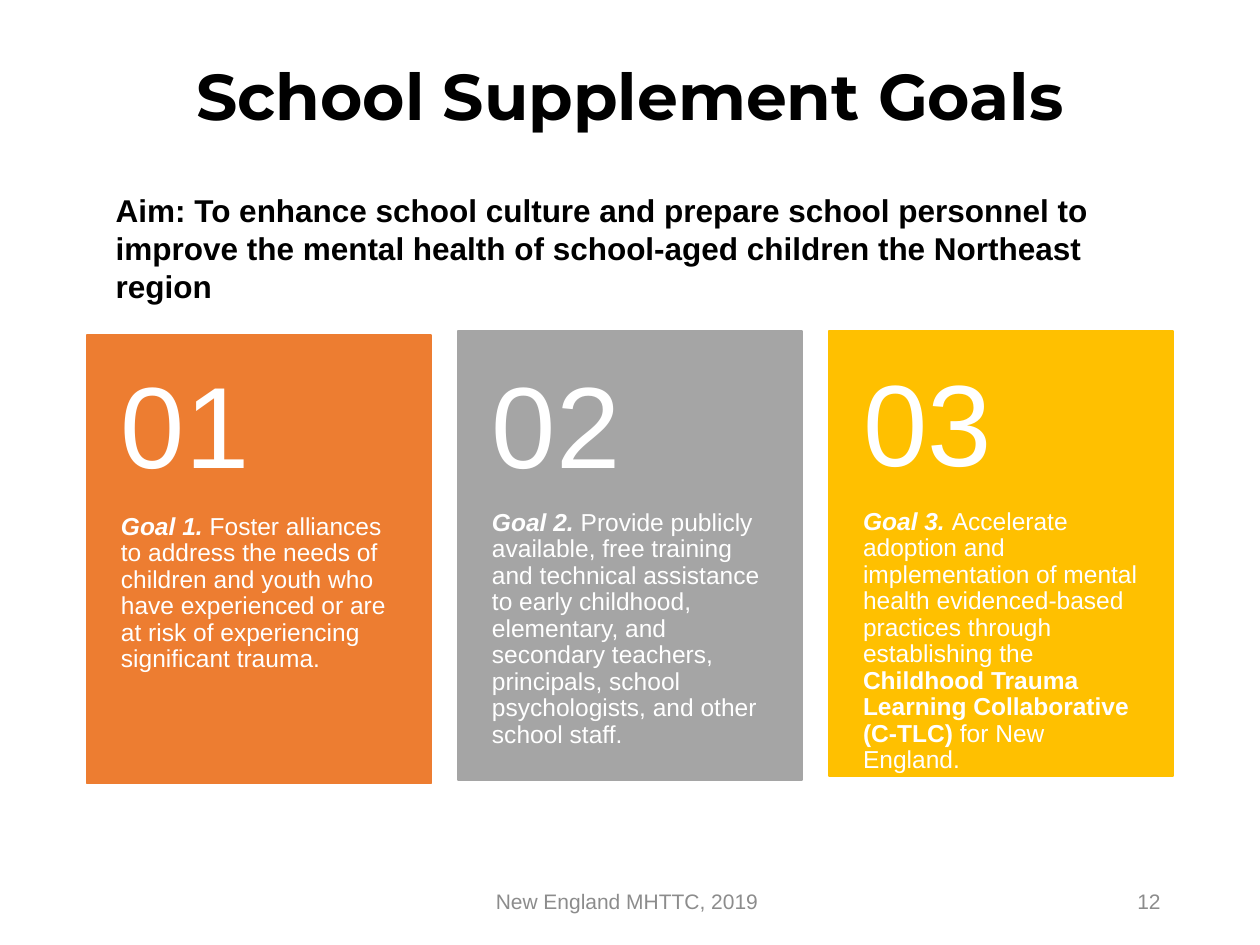
import pptx
import pptx.util
import pptx.dml.color
import pptx.enum.shapes
import pptx.enum.text
from dataclasses import dataclass

Inches = pptx.util.Inches
Align = pptx.enum.text.PP_ALIGN
Anchor = pptx.enum.text.MSO_ANCHOR


@dataclass(frozen=True)
class Theme:
    head: str = "Montserrat"
    body: str = "Arial"
    black: str = "000000"
    white: str = "FFFFFF"
    gray: str = "8C8C8C"
    title: int = 37
    aim: int = 18
    number: int = 66
    goal: int = 14
    foot: int = 12


def color(code):
    return pptx.dml.color.RGBColor.from_string(code)


class Deck:
    def __init__(self, theme):
        self.theme = theme
        self.prs = pptx.Presentation()
        self.prs.slide_width, self.prs.slide_height = Inches(10), Inches(7.5)
        self.slide = self.prs.slides.add_slide(self.prs.slide_layouts[6])

    def text(self, box, runs, size, ink, font=None, bold=None, align=Align.LEFT,
             anchor=Anchor.TOP, pad=(0.1, 0.05, 0.1, 0.05), lead=None, home=None):
        """Add a text box; runs are (words, bold, italic), None inherits."""
        shapes = (home or self.slide).shapes
        frame = shapes.add_textbox(*map(Inches, box)).text_frame
        frame.word_wrap = True
        frame.vertical_anchor = anchor
        (frame.margin_left, frame.margin_top,
         frame.margin_right, frame.margin_bottom) = map(Inches, pad)
        para = frame.paragraphs[0]
        para.alignment = align
        para.line_spacing = lead
        para.font.name = font or self.theme.body
        para.font.size = pptx.util.Pt(size)
        para.font.bold = bold
        para.font.color.rgb = color(ink)
        for words, strong, slant in runs:
            run = para.add_run()
            run.text = words
            run.font.bold, run.font.italic = strong, slant

    def panel(self, box, fill, home):
        kind = pptx.enum.shapes.MSO_SHAPE.RECTANGLE
        rect = home.shapes.add_shape(kind, *map(Inches, box))
        rect.shadow.inherit = False
        rect.fill.solid()
        rect.fill.fore_color.rgb = color(fill)
        rect.line.color.rgb = color(fill)
        rect.line.width = pptx.util.Pt(1)

    def card(self, home, left, top, high, rise, number, fill, runs):
        """Add a goal panel with its number and words; rise is the number's top."""
        look, wide = self.theme, 2.73
        body = round(high * 0.6, 2)
        self.panel((left, top, wide, high), fill, home)
        self.text((left, top + high - body, wide, body), runs, look.goal,
                  look.white, pad=(0.27, 0, 0.27, 0.36), lead=0.9, home=home)
        self.text((left, rise, wide, 1.31), [(number, None, None)], look.number,
                  look.white, anchor=Anchor.MIDDLE,
                  pad=(0.27, 0.18, 0.27, 0.18), lead=0.9, home=home)


GOALS = [
    (2.66, 3.56, 2.77, "ED7D31", [
        ("Foster alliances to address the needs of children and youth who have "
         "experienced or are at risk of experiencing significant trauma.", None, None)]),
    (2.63, 3.56, 2.77, "A5A5A5", [
        ("Provide publicly available, free training and technical assistance to "
         "early childhood, elementary, and secondary teachers, principals, school "
         "psychologists, and other school staff.", None, None)]),
    (2.63, 3.53, 2.75, "FFC000", [
        ("Accelerate adoption and implementation of mental health evidenced-based "
         "practices through establishing the ", None, None),
        ("Childhood Trauma Learning Collaborative (C-TLC) ", True, None),
        ("for New England.", None, None)]),
]


def main():
    look = Theme()
    deck = Deck(look)
    deck.text((0.69, 0.4, 8.62, 1.35), [("School Supplement Goals", None, None)],
              look.title, look.black, look.head, True, Align.CENTER,
              pad=(0.1, 0.11, 0.1, 0.05), lead=0.9)
    deck.text((3.31, 6.95, 3.38, 0.4), [("New England MHTTC, 2019 ", None, None)],
              look.foot, look.gray, align=Align.CENTER, anchor=Anchor.MIDDLE)

    group = deck.slide.shapes.add_group_shape()
    left, step = 0.69, 2.945
    for i, (top, high, rise, fill, runs) in enumerate(GOALS):
        lead = (f"Goal {i + 1}. ", True, True)
        deck.card(group, left + i * step, top, high, rise, f"{i + 1:02}",
                  fill, [lead, *runs])

    deck.text((0.82, 1.47, 8.49, 1.01),
              [("Aim: To enhance school culture and prepare school personnel to "
                "improve the mental health of school-aged children the Northeast "
                "region", None, None)], look.aim, look.black, bold=True)
    deck.text((7.06, 6.95, 2.25, 0.4), [("12", None, None)], look.foot, look.gray,
              align=Align.RIGHT, anchor=Anchor.MIDDLE)
    deck.prs.save("out.pptx")


if __name__ == "__main__":
    main()
